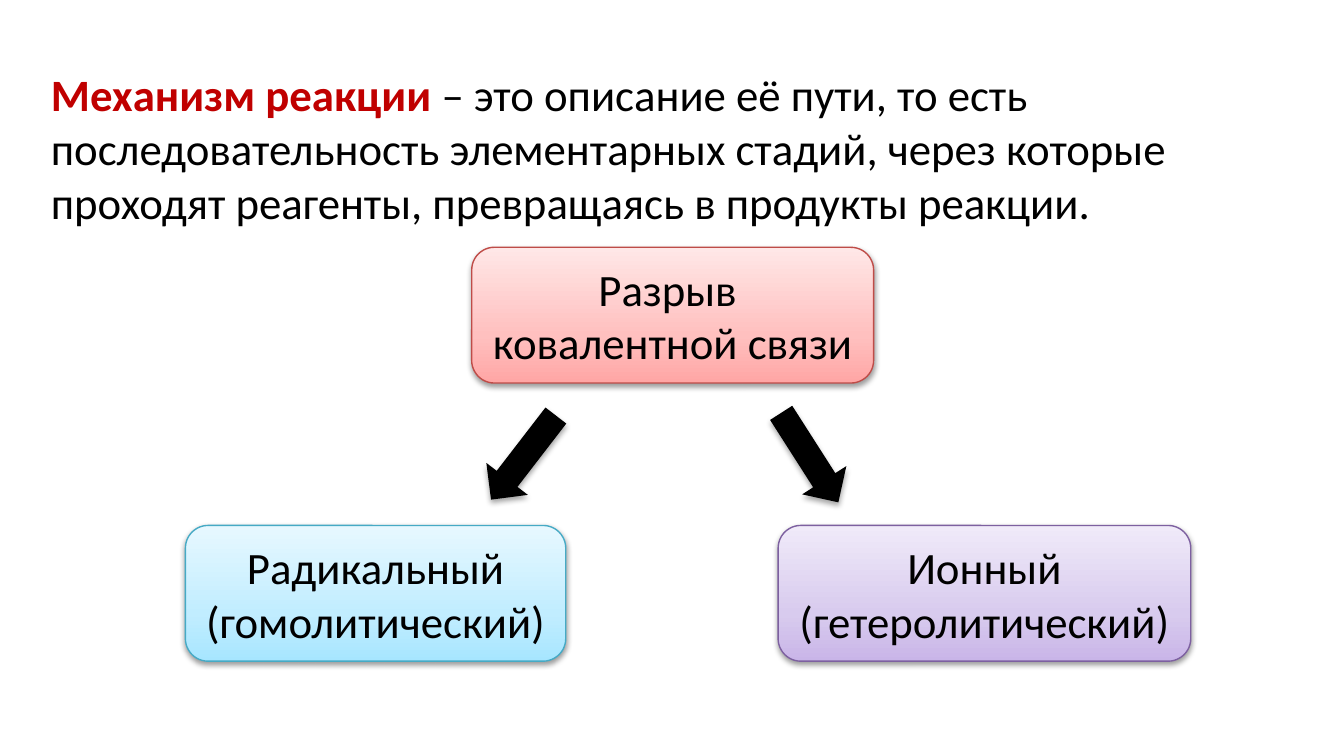
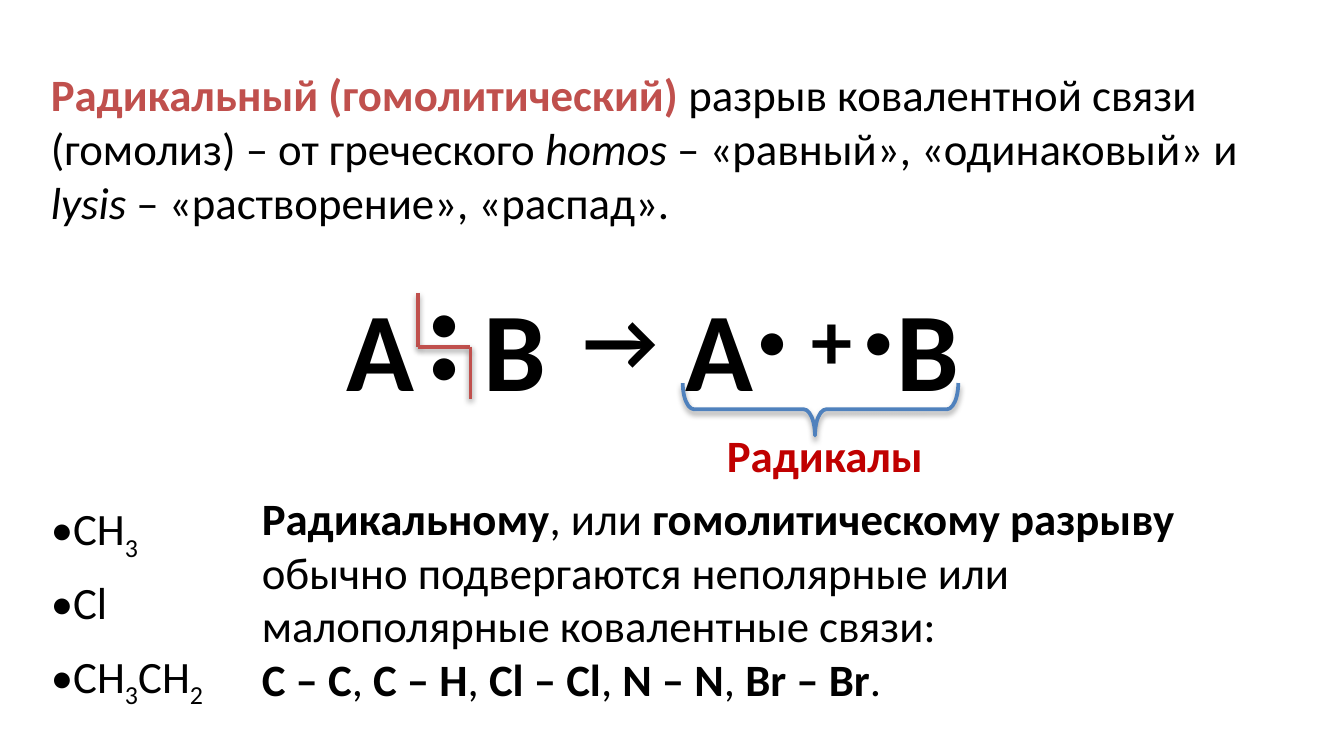
from copy import deepcopy
from dataclasses import dataclass

from lxml import etree
from pptx import Presentation
from pptx.dml.color import RGBColor
from pptx.enum.shapes import MSO_CONNECTOR, MSO_SHAPE
from pptx.enum.text import MSO_ANCHOR, MSO_AUTO_SIZE, PP_ALIGN
from pptx.oxml.ns import qn
from pptx.util import Inches, Pt

STRAIGHT = MSO_CONNECTOR.STRAIGHT
ROUNDED = MSO_SHAPE.ROUNDED_RECTANGLE
DOWN_ARROW = MSO_SHAPE.DOWN_ARROW
LEFT_BRACE = MSO_SHAPE.LEFT_BRACE
MIDDLE = MSO_ANCHOR.MIDDLE
FIT_SHAPE = MSO_AUTO_SIZE.SHAPE_TO_FIT_TEXT
LEFT = PP_ALIGN.LEFT
CENTER = PP_ALIGN.CENTER

BLACK = RGBColor(0x00, 0x00, 0x00)
DARK_RED = RGBColor(0xC0, 0x00, 0x00)
BRICK = RGBColor(0xC0, 0x50, 0x4D)
BLUE = RGBColor(0x4F, 0x81, 0xBD)
ROSE_LINE = RGBColor(0xBF, 0x4C, 0x48)
ROSE = (RGBColor(0xFF, 0xA6, 0xA5), RGBColor(0xFF, 0xC0, 0xBF), RGBColor(0xFF, 0xE7, 0xE7))
AQUA_LINE = RGBColor(0x46, 0xAA, 0xC5)
AQUA = (RGBColor(0xA7, 0xE6, 0xFF), RGBColor(0xC1, 0xED, 0xFF), RGBColor(0xE7, 0xF8, 0xFF))
VIOLET_LINE = RGBColor(0x7D, 0x60, 0xA0)
VIOLET = (RGBColor(0xC9, 0xB5, 0xE8), RGBColor(0xD8, 0xCB, 0xEE), RGBColor(0xF0, 0xEA, 0xF9))

FONT = "Calibri"
BODY_SIZE = 24
DOT_SIZE = 28
SIGN_SIZE = 44
ATOM_SIZE = 60
GRADIENT_POSITIONS = (0, 0.35, 1)


@dataclass(frozen=True)
class Span:
    text: str
    color: RGBColor = BLACK
    bold: bool = False
    italic: bool = False
    subscript: bool = False


@dataclass(frozen=True)
class Box:
    x: float
    y: float
    w: float
    h: float

    def lengths(self) -> tuple:
        return Inches(self.x), Inches(self.y), Inches(self.w), Inches(self.h)


@dataclass(frozen=True)
class Node:
    box: Box
    lines: tuple
    stops: tuple
    outline: RGBColor


@dataclass(frozen=True)
class Glyph:
    text: str
    size: int
    box: Box


DEFINITION_BOX = Box(0.28, 0.45, 9.45, 1.31)

MECHANISM = [[
    Span("Механизм реакции ", DARK_RED, bold=True),
    Span("– это описание её пути, то есть последовательность элементарных стадий, "
         "через которые проходят реагенты, превращаясь в продукты реакции."),
]]

NODES = (
    Node(Box(3.51, 1.84, 2.99, 1.01), ("Разрыв ", "ковалентной связи"), ROSE, ROSE_LINE),
    Node(Box(1.38, 3.91, 2.83, 1.01), ("Радикальный", "(гомолитический)"), AQUA, AQUA_LINE),
    Node(Box(5.79, 3.91, 3.07, 1.01), ("Ионный", "(гетеролитический)"), VIOLET, VIOLET_LINE),
)

ARROWS = ((3.7, 37.6), (5.83, 327.4))

HOMOLYSIS = [[
    Span("Радикальный (гомолитический) ", BRICK, bold=True),
    Span("разрыв ковалентной связи (гомолиз) – от греческого "),
    Span("homos ", italic=True),
    Span("– «равный», «одинаковый» и "),
    Span("lysis ", italic=True),
    Span("– «растворение», «распад»."),
]]

EQUATION = (
    Glyph("А", ATOM_SIZE, Box(2.48, 2.03, 0.71, 1.11)),
    Glyph("В", ATOM_SIZE, Box(3.5, 2.03, 0.67, 1.11)),
    Glyph("•", DOT_SIZE, Box(3.11, 2.42, 0.4, 0.57)),
    Glyph("•", DOT_SIZE, Box(3.11, 2.1, 0.4, 0.57)),
    Glyph("→", SIGN_SIZE, Box(4.24, 2.1, 0.76, 0.84)),
    Glyph("А", ATOM_SIZE, Box(5, 2.03, 0.71, 1.11)),
    Glyph("•", DOT_SIZE, Box(5.55, 2.24, 0.4, 0.57)),
    Glyph("+", SIGN_SIZE, Box(5.94, 2.1, 0.51, 0.84)),
    Glyph("В", ATOM_SIZE, Box(6.57, 2.03, 0.67, 1.11)),
    Glyph("•", DOT_SIZE, Box(6.34, 2.24, 0.4, 0.57)),
)

CLEAVAGE = ((3.11, 2.18), (3.11, 2.58), (3.5, 2.58), (3.5, 2.97))

RADICALS = (
    (0.87, [Span("•СН"), Span("3", subscript=True)]),
    (0.63, [Span("•Сl")]),
    (1.45, [Span("•СН"), Span("3", subscript=True), Span("СН"), Span("2", subscript=True)]),
)
RADICAL_TOP = 3.68
RADICAL_STEP = 0.55

BONDS = ("С – С", "С – Н", "Cl – Cl", "N – N", "Br – Br")


def bond_spans() -> list:
    spans = []
    for bond in BONDS:
        spans += [Span(bond, bold=True), Span(", ")]
    return spans[:-1] + [Span(".")]


def write(tf, paragraphs: list, size: int = BODY_SIZE, wrap: bool = True, align=LEFT) -> None:
    tf.word_wrap = wrap
    tf.auto_size = FIT_SHAPE
    for i, spans in enumerate(paragraphs):
        p = tf.paragraphs[0] if i == 0 else tf.add_paragraph()
        p.alignment = align
        for span in spans:
            r = p.add_run()
            r.text = span.text
            r.font.name = FONT
            r.font.size = Pt(size)
            r.font.bold = span.bold
            r.font.italic = span.italic
            r.font.color.rgb = span.color
            if span.subscript:
                r._r.get_or_add_rPr().set("baseline", "-25000")


def add_text(slide, box: Box, paragraphs: list, size: int = BODY_SIZE, wrap: bool = True) -> None:
    tb = slide.shapes.add_textbox(*box.lengths())
    write(tb.text_frame, paragraphs, size, wrap)


def cast_shadow(sp, alpha: int = 38, distance: float = 1.6) -> None:
    effects = etree.SubElement(sp._element.spPr, qn("a:effectLst"))
    shadow = etree.SubElement(
        effects, qn("a:outerShdw"), blurRad=str(Pt(3.1)), dist=str(Pt(distance)),
        dir="5400000", rotWithShape="0")
    color = etree.SubElement(shadow, qn("a:srgbClr"), val=str(BLACK))
    etree.SubElement(color, qn("a:alpha"), val=str(alpha * 1000))


def fill_gradient(sp, colors: tuple) -> None:
    sp.fill.gradient()
    sp.fill.gradient_angle = 90
    first = sp._element.spPr.find(".//" + qn("a:gs"))
    first.addnext(deepcopy(first))
    for stop, color, position in zip(sp.fill.gradient_stops, colors, GRADIENT_POSITIONS):
        stop.color.rgb = color
        stop.position = position


def add_node(slide, node: Node) -> None:
    sp = slide.shapes.add_shape(ROUNDED, *node.box.lengths())
    fill_gradient(sp, node.stops)
    sp.line.color.rgb = node.outline
    sp.line.width = Pt(0.75)
    cast_shadow(sp)
    sp.text_frame.vertical_anchor = MIDDLE
    write(sp.text_frame, [[Span(line)] for line in node.lines], wrap=False, align=CENTER)


def add_arrow(slide, x: float, rotation: float) -> None:
    sp = slide.shapes.add_shape(DOWN_ARROW, *Box(x, 3.01, 0.39, 0.79).lengths())
    sp.rotation = rotation
    sp.fill.solid()
    sp.fill.fore_color.rgb = BLACK
    sp.line.fill.background()
    cast_shadow(sp, alpha=35, distance=1.8)


def add_brace(slide, box: Box) -> None:
    sp = slide.shapes.add_shape(LEFT_BRACE, *box.lengths())
    sp.adjustments[0] = 0.215
    sp.adjustments[1] = 0.48
    sp.rotation = 270
    sp.fill.background()
    sp.line.color.rgb = BLUE
    sp.line.width = Pt(2)
    cast_shadow(sp)


def add_cleavage(slide) -> None:
    for start, end in zip(CLEAVAGE, CLEAVAGE[1:]):
        line = slide.shapes.add_connector(STRAIGHT, *(Inches(v) for v in start + end))
        line.line.color.rgb = BRICK
        line.line.width = Pt(2)
        cast_shadow(line)


def build_mechanism(slide) -> None:
    add_text(slide, DEFINITION_BOX, MECHANISM)
    for node in NODES:
        add_node(slide, node)
    for x, rotation in ARROWS:
        add_arrow(slide, x, rotation)


def build_homolysis(slide) -> None:
    add_text(slide, DEFINITION_BOX, HOMOLYSIS)
    for glyph in EQUATION:
        add_text(slide, glyph.box, [[Span(glyph.text, bold=True)]], glyph.size, wrap=False)
    add_cleavage(slide)
    add_brace(slide, Box(5.91, 2.02, 0.39, 2.05))
    add_text(slide, Box(5.31, 3.13, 1.68, 0.5),
             [[Span("Радикалы", DARK_RED, bold=True)]], wrap=False)
    for i, (width, spans) in enumerate(RADICALS):
        add_text(slide, Box(0.28, RADICAL_TOP + i * RADICAL_STEP, width, 0.5), [spans], wrap=False)
    add_text(slide, Box(1.85, 3.6, 7.87, 1.72), [
        [
            Span("Радикальному", bold=True),
            Span(", или "),
            Span("гомолитическому разрыву ", bold=True),
            Span("обычно подвергаются неполярные или малополярные ковалентные связи:"),
        ],
        bond_spans(),
    ])


def main() -> None:
    prs = Presentation()
    prs.slide_width = Inches(10)
    prs.slide_height = Inches(10 * 9 / 16)
    blank = prs.slide_layouts[6]
    for build in (build_mechanism, build_homolysis):
        build(prs.slides.add_slide(blank))
    prs.save("out.pptx")


if __name__ == "__main__":
    main()
